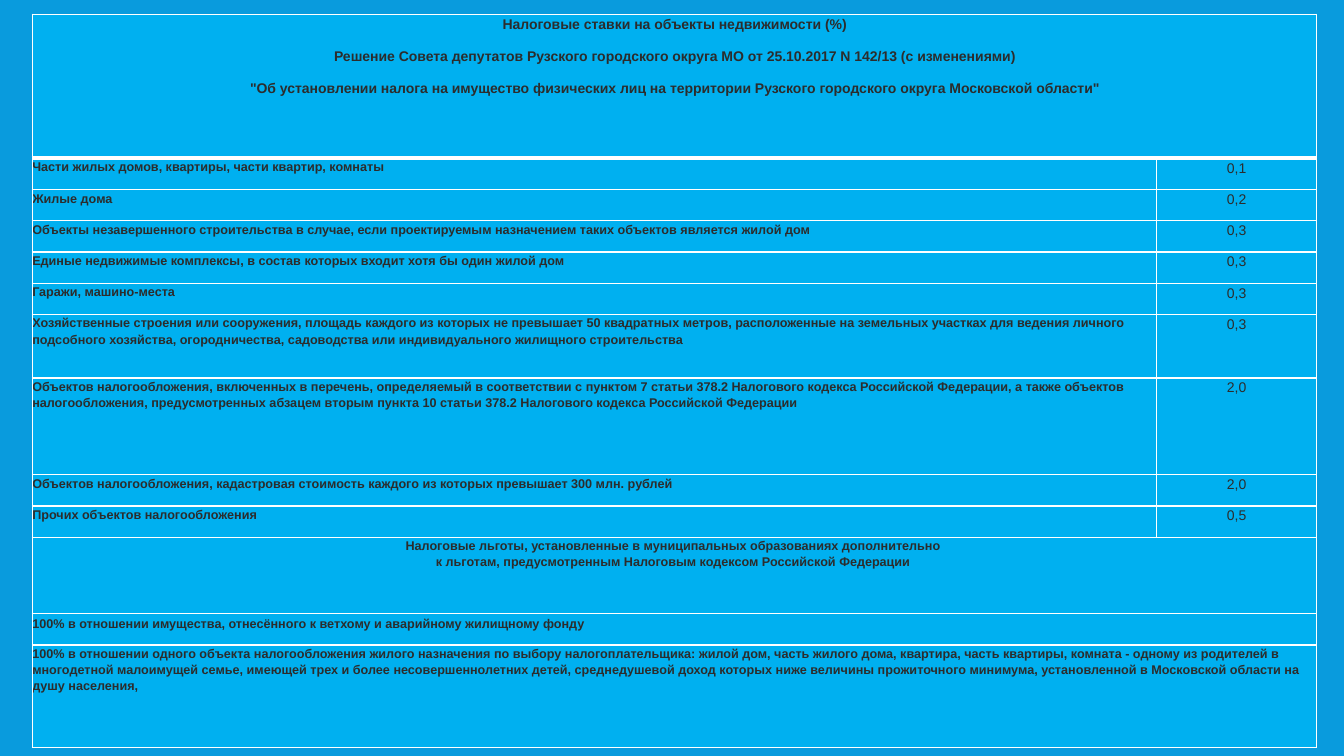
from pptx import Presentation, util as u
from pptx.dml.color import RGBColor
from pptx.enum import text
from pptx.oxml import parse_xml
from pptx.oxml.ns import nsdecls

WIDTH, HEIGHT = 13.33, 7.5
LEFT, CENTER = text.PP_ALIGN.LEFT, text.PP_ALIGN.CENTER
LINE = 0.31

HEADING = [
    "Налоговые ставки на объекты недвижимости (%)",
    "Решение Совета депутатов Рузского городского округа МО от 25.10.2017 N 142/13 (с изменениями)",
    "\"Об установлении налога на имущество физических лиц на территории "
    "Рузского городского округа Московской области\"",
]
# Property type, rate, row height
RATES = [
    ("Части жилых домов, квартиры, части квартир, комнаты", "0,1", LINE),
    ("Жилые дома", "0,2", LINE),
    ("Объекты незавершенного строительства в случае, если проектируемым назначением "
     "таких объектов является жилой дом", "0,3", LINE),
    ("Единые недвижимые комплексы, в состав которых входит хотя бы один жилой дом", "0,3", LINE),
    ("Гаражи, машино-места", "0,3", LINE),
    ("Хозяйственные строения или сооружения, площадь каждого из которых не превышает "
     "50 квадратных метров, расположенные на земельных участках для ведения личного "
     "подсобного хозяйства, огородничества, садоводства или индивидуального жилищного "
     "строительства", "0,3", 0.63),
    ("Объектов налогообложения, включенных в перечень, определяемый в соответствии с "
     "пунктом 7 статьи 378.2 Налогового кодекса Российской Федерации, а также объектов "
     "налогообложения, предусмотренных абзацем вторым пункта 10 статьи 378.2 Налогового "
     "кодекса Российской Федерации", "2,0", 0.96),
    ("Объектов налогообложения, кадастровая стоимость каждого из которых превышает "
     "300 млн. рублей", "2,0", LINE),
    ("Прочих объектов налогообложения", "0,5", LINE),
]
# Text, alignment, line spacing, row height
RELIEFS = [
    ("Налоговые льготы, установленные в муниципальных образованиях дополнительно \n"
     "к льготам, предусмотренным Налоговым кодексом Российской Федерации ", CENTER, 1.15, 0.76),
    ("100% в отношении имущества, отнесённого к ветхому и аварийному жилищному фонду",
     LEFT, u.Pt(12.8), LINE),
    ("100% в отношении одного объекта налогообложения жилого назначения по выбору "
     "налогоплательщика: жилой дом, часть жилого дома, квартира, часть квартиры, комната - "
     "одному из родителей в многодетной малоимущей семье, имеющей трех и более "
     "несовершеннолетних детей, среднедушевой доход которых ниже величины прожиточного "
     "минимума, установленной в Московской области на душу населения,", LEFT, 1.15, 1.02),
]


def color(value):
    return RGBColor.from_string(value)


def assign(target, values):
    for name, value in values.items():
        setattr(target, name, value)


class TaxSlide:
    background, cell_fill, border, ink = "099BDD", "00B0F0", "FFFFFF", "2C2C2C"
    margins = dict.fromkeys(("margin_left", "margin_top", "margin_right", "margin_bottom"), 0)

    def __init__(self, presentation):
        self.slide = presentation.slides.add_slide(presentation.slide_layouts[6])
        fill = self.slide.background.fill
        fill.solid()
        fill.fore_color.rgb = color(self.background)

    def add_table(self, left, top, columns, rows):
        shape = self.slide.shapes.add_table(
            len(rows), len(columns), u.Inches(left), u.Inches(top),
            u.Inches(sum(columns)), u.Inches(sum(rows)))
        table = shape.table
        assign(table, {"first_row": False, "horz_banding": False})
        for column, width in zip(table.columns, columns):
            column.width = u.Inches(width)
        for row, height in zip(table.rows, rows):
            row.height = u.Inches(height)
        return table

    def style_cell(self, cell, top=1, bottom=1):
        """Set margins, borders (widths in points) and fill."""
        assign(cell, self.margins)
        properties = cell._tc.get_or_add_tcPr()
        for side, width in {"L": 1, "R": 1, "T": top, "B": bottom}.items():
            properties.append(parse_xml(
                f'<a:ln{side} {nsdecls("a")} w="{u.Pt(width)}"><a:solidFill>'
                f'<a:srgbClr val="{self.border}"/></a:solidFill></a:ln{side}>'))
        cell.fill.solid()
        cell.fill.fore_color.rgb = color(self.cell_fill)

    def fill_text(self, cell, lines, size=9, bold=True, alignment=LEFT, spacing=1.15):
        frame = cell.text_frame
        for index, line in enumerate(lines):
            paragraph = frame.add_paragraph() if index else frame.paragraphs[0]
            paragraph.text = line
            assign(paragraph, {"alignment": alignment, "line_spacing": spacing,
                               "space_after": u.Pt(10)})
            for run in paragraph.runs:
                assign(run.font, {"size": u.Pt(size), "bold": bold, "name": "Arial"})
                run.font.color.rgb = color(self.ink)

    def fill_across(self, table, row, lines, **style):
        """Merge the row's two cells and put the lines in them."""
        table.cell(row, 0).merge(table.cell(row, 1))
        self.fill_text(table.cell(row, 0), lines, **style)


def main():
    presentation = Presentation()
    assign(presentation, {"slide_width": u.Inches(WIDTH), "slide_height": u.Inches(HEIGHT)})
    tax_slide = TaxSlide(presentation)
    heights = [1.43] + [entry[-1] for entry in RATES + RELIEFS]
    table = tax_slide.add_table(0.32, 0.14, [11.15, 1.59], heights)

    for row in range(len(heights)):
        for column in range(2):
            tax_slide.style_cell(table.cell(row, column), top=3 if row == 1 else 1,
                                 bottom=3 if row == 0 else 1)

    tax_slide.fill_across(table, 0, HEADING, size=10, alignment=CENTER)
    for row, (name, rate, _) in enumerate(RATES, 1):
        tax_slide.fill_text(table.cell(row, 0), [name])
        tax_slide.fill_text(table.cell(row, 1), [rate], size=10, bold=False, alignment=CENTER)
    for row, (relief, alignment, spacing, _) in enumerate(RELIEFS, 1 + len(RATES)):
        tax_slide.fill_across(table, row, [relief], alignment=alignment, spacing=spacing)

    presentation.save("out.pptx")


if __name__ == "__main__":
    main()
